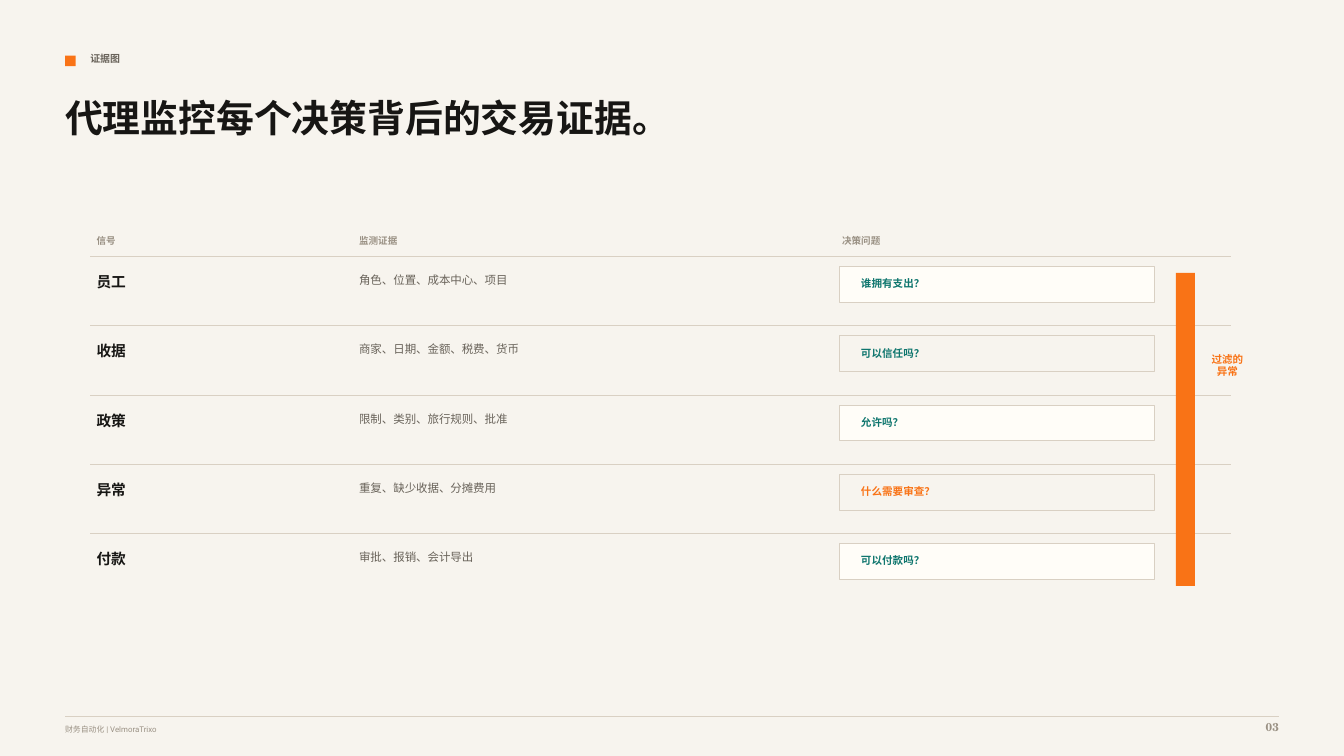
from pptx import Presentation
from pptx.dml.color import RGBColor
from pptx.enum.shapes import MSO_CONNECTOR, MSO_SHAPE
from pptx.enum.text import MSO_ANCHOR, MSO_AUTO_SIZE, PP_ALIGN
from pptx.oxml import parse_xml
from pptx.oxml.ns import nsdecls
from pptx.util import Pt

SANS, SERIF = "Roboto", "TeX Gyre Schola"
PAPER, WHITE, RULE = "F7F4EE", "FFFDF8", "D9D0C3"
INK, BODY, MUTED = "171614", "69635A", "9A9184"
ORANGE, TEAL = "F97316", "0F766E"

TITLE = "代理监控每个决策背后的交易证据。"
# heading, left, width
HEADERS = [
    ("信号", 69, 120),
    ("监测证据", 256.5, 232.5),
    ("决策问题", 601.5, 210),
]
# signal, evidence, question, question colour
ROWS = [
    ("员工", "角色、位置、成本中心、项目", "谁拥有支出？", TEAL),
    ("收据", "商家、日期、金额、税费、货币", "可以信任吗？", TEAL),
    ("政策", "限制、类别、旅行规则、批准", "允许吗？", TEAL),
    ("异常", "重复、缺少收据、分摊费用", "什么需要审查？", ORANGE),
    ("付款", "审批、报销、会计导出", "可以付款吗？", TEAL),
]
ROWS_TOP, ROW_PITCH = 183, 49.5
SIGNAL_X, EVIDENCE_X = HEADERS[0][1], HEADERS[1][1]


def rgb(value):
    return RGBColor.from_string(value)


def write(shape, text, size, color, bold=True, font=SANS,
          align=PP_ALIGN.LEFT, inset=(0, 0)):
    """Fill a shape with one top-anchored paragraph; inset is (left, top)."""
    tf = shape.text_frame
    tf.word_wrap = True
    tf.auto_size = MSO_AUTO_SIZE.NONE
    tf.vertical_anchor = MSO_ANCHOR.TOP
    tf.margin_left, tf.margin_top = (Pt(v) for v in inset)
    tf.margin_right = tf.margin_bottom = 0
    p = tf.paragraphs[0]
    p.text = text
    p.alignment = align
    p.font.name, p.font.size, p.font.bold = font, Pt(size), bold
    p.font.color.rgb = rgb(color)


def add_text(s, x, y, w, h, *args, **style):
    write(s.shapes.add_textbox(Pt(x), Pt(y), Pt(w), Pt(h)), *args, **style)


def add_rect(s, x, y, w, h, fill=None, line=None):
    sp = s.shapes.add_shape(MSO_SHAPE.RECTANGLE, Pt(x), Pt(y), Pt(w), Pt(h))
    sp.shadow.inherit = False
    if fill:
        sp.fill.solid()
        sp.fill.fore_color.rgb = rgb(fill)
    else:
        sp.fill.background()
    if line:
        sp.line.color.rgb = rgb(line)
        sp.line.width = Pt(0.75)
    else:
        sp.line.fill.background()
    return sp


def add_rule(s, x, y, w):
    line = s.shapes.add_connector(
        MSO_CONNECTOR.STRAIGHT, Pt(x), Pt(y), Pt(x + w), Pt(y))
    line.line.color.rgb = rgb(RULE)
    line.line.width = Pt(0.75)
    line._element.spPr.append(parse_xml(f"<a:effectLst {nsdecls('a')}/>"))


def add_heading(s):
    add_rect(s, 46.5, 39.75, 7.5, 7.5, ORANGE)
    add_text(s, 64.5, 37.5, 420, 13.5, "证据图", 7.1, BODY)
    title = s.shapes.title
    title.left, title.top, title.width, title.height = (
        Pt(v) for v in (46.5, 67.5, 637.5, 75))
    write(title, TITLE, 27, INK, font=SERIF)


def add_evidence_map(s):
    for text, x, w in HEADERS:
        add_text(s, x, 168, w, 12, text, 6.8, MUTED)
    for i, (signal, evidence, question, color) in enumerate(ROWS):
        y = ROWS_TOP + i * ROW_PITCH
        add_rule(s, 64.5, y + 0.3, 814.5)
        add_text(s, SIGNAL_X, y + 12, 135, 13.5, signal, 10.5, INK)
        add_text(s, EVIDENCE_X, y + 12, 270, 25.5, evidence, 8.2, BODY,
                 bold=False)
        box = add_rect(s, 599.5, y + 7.5, 225, 25.5,
                       PAPER if i % 2 else WHITE, RULE)
        write(box, question, 7.5, color, inset=(15.5, 7.5))


def add_filter(s):
    add_rect(s, 840, 195, 13.5, 223.5, ORANGE)
    add_text(s, 864, 252, 25.5, 99, "过滤的异常", 7.5, ORANGE,
             align=PP_ALIGN.CENTER)


def add_footer(s):
    add_rule(s, 46.5, 511.5, 867)
    add_text(s, 46.5, 517.5, 570, 10.5, "财务自动化 | VelmoraTrixo", 5.6,
             MUTED, bold=False)
    add_text(s, 877.5, 514.5, 36, 13.5, "03", 8.2, MUTED, font=SERIF,
             align=PP_ALIGN.RIGHT)


def main():
    prs = Presentation()
    prs.slide_width, prs.slide_height = Pt(960), Pt(540)
    s = prs.slides.add_slide(prs.slide_layouts[5])
    s.background.fill.solid()
    s.background.fill.fore_color.rgb = rgb(PAPER)
    add_heading(s)
    add_evidence_map(s)
    add_filter(s)
    add_footer(s)
    prs.save("out.pptx")


if __name__ == "__main__":
    main()
